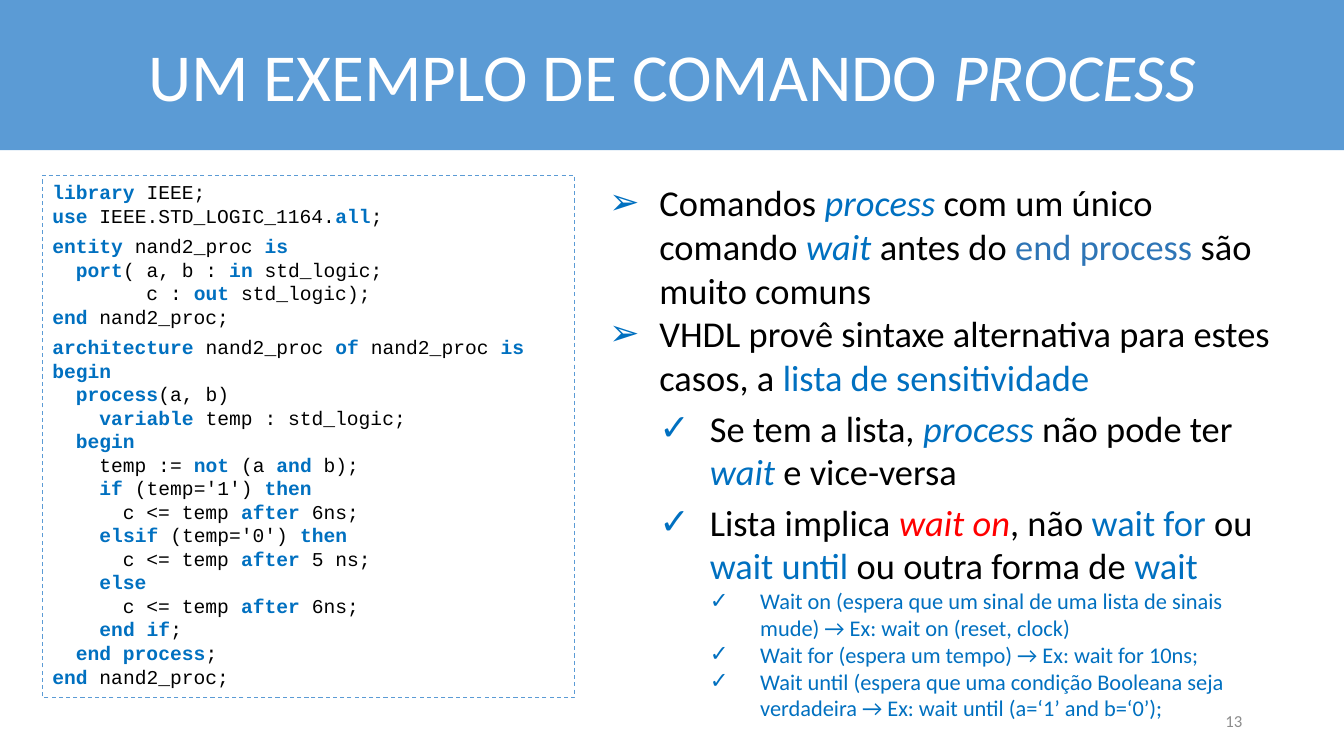
from lxml import etree
from pptx import Presentation
from pptx import util as u
from pptx.dml.color import RGBColor
from pptx.enum import dml, shapes, text
from pptx.oxml.ns import qn

COLORS = {"band": "5B9BD5", "white": "FFFFFF", "black": "000000", "blue": "0070C0",
          "steel": "2E75B6", "red": "FF0000", "gray": "8C8C8C"}

# Segments are split by "|"; a leading mark selects the format
MARKS = {"*": {"color": "blue", "bold": True},
         "~": {"color": "blue"},
         "/": {"color": "blue", "italic": True},
         "!": {"color": "red", "italic": True},
         "^": {"color": "steel"},
         "_": {"italic": True}}

TITLE = "UM EXEMPLO DE COMANDO |_PROCESS"

# Each block of code is set off by a small gap
CODE_BLOCKS = [
    ["*library |IEEE;",
     "*use |IEEE.STD_LOGIC_1164.|*all|;"],
    ["*entity |nand2_proc |*is",
     "*  port|( a, b : |*in |std_logic;",
     "        c : |*out |std_logic);",
     "*end |nand2_proc;"],
    ["*architecture |nand2_proc |*of |nand2_proc |*is",
     "*begin",
     "  |*process|(a, b)",
     "    |*variable |temp : std_logic;",
     "  |*begin",
     "    temp := |*not |(a |*and |b);",
     "    |*if |(temp='1') |*then",
     "      c <= temp |*after |6ns;",
     "    |*elsif |(temp='0') |*then",
     "      c <= temp |*after |5 ns;",
     "*    else",
     "      c <= temp |*after |6ns;",
     "    |*end if|;",
     "  |*end process|;",
     "*end |nand2_proc;"],
]

# Level, gap before in points, text
POINTS = [
    (0, 0, "Comandos |/process |com um único comando |/wait |antes do "
           "|^end process |são muito comuns"),
    (0, 0, "VHDL provê sintaxe alternativa para estes casos, a |~lista de sensitividade"),
    (1, 4.8, "Se tem a lista, |/process |não pode ter |/wait |e vice-versa"),
    (1, 4.8, "Lista implica |!wait on|, não |~wait for |ou |~wait until "
             "|ou outra forma de |~wait"),
    (2, 0, "~Wait on (espera que um sinal de uma lista de sinais mude) → "
           "Ex: wait on (reset, clock)"),
    (2, 0, "~Wait for (espera um tempo) → Ex: wait for 10ns;"),
    (2, 0, "~Wait until (espera que uma condição Booleana seja verdadeira → "
           "Ex: wait until (a=‘1’ and b=‘0’);"),
]


def rgb(name):
    return RGBColor.from_string(COLORS[name])


def write(paragraph, marked, size, font="Calibri", color="black",
          align=text.PP_ALIGN.LEFT, gap=0):
    """Fill a paragraph with marked text."""
    paragraph.alignment = align
    paragraph.space_before = u.Pt(gap)
    paragraph.space_after = u.Pt(0)
    paragraph.line_spacing = u.Pt(round(size * 1.2, 1))
    for segment in marked.split("|"):
        look = MARKS.get(segment[0], {})
        run = paragraph.add_run()
        run.text = segment[1:] if look else segment
        run.font.name, run.font.size = font, u.Pt(size)
        run.font.bold = look.get("bold", False)
        run.font.italic = look.get("italic", False)
        run.font.color.rgb = rgb(look.get("color", color))


def add_bullet(paragraph, char, indent):
    """Hang a blue bullet half an inch before the text."""
    props = paragraph._p.get_or_add_pPr()
    props.set("marL", str(u.Inches(indent)))
    props.set("indent", str(u.Inches(-0.5)))
    tint = etree.SubElement(props, qn("a:buClr"))
    etree.SubElement(tint, qn("a:srgbClr"), val=COLORS["blue"])
    etree.SubElement(props, qn("a:buChar"), char=char)


def next_paragraph(frame, first):
    return frame.paragraphs[0] if first else frame.add_paragraph()


class ProcessSlide:
    def __init__(self, deck):
        self.slide = deck.slides.add_slide(deck.slide_layouts[1])

    def place(self, shape, left, top, width, height):
        shape.left, shape.top = u.Inches(left), u.Inches(top)
        shape.width, shape.height = u.Inches(width), u.Inches(height)

    def title(self, marked):
        banner = self.slide.shapes.title
        self.place(banner, 0, 0, 13.33, 1.49)
        banner.fill.solid()
        banner.fill.fore_color.rgb = rgb("band")
        frame = banner.text_frame
        frame.auto_size = text.MSO_AUTO_SIZE.NONE
        frame.vertical_anchor = text.MSO_ANCHOR.MIDDLE
        frame.margin_left = frame.margin_right = u.Inches(0.8)
        write(frame.paragraphs[0], marked, 48, color="white", align=text.PP_ALIGN.CENTER)

    def code(self, blocks):
        listing = self.slide.shapes.add_shape(
            shapes.MSO_SHAPE.RECTANGLE,
            u.Inches(0.42), u.Inches(1.74), u.Inches(5.28), u.Inches(5.18))
        listing.shadow.inherit = False
        listing.fill.background()
        listing.line.color.rgb = rgb("band")
        listing.line.width = u.Pt(0.75)
        listing.line.dash_style = dml.MSO_LINE.DASH
        frame = listing.text_frame
        frame.word_wrap = True
        frame.vertical_anchor = text.MSO_ANCHOR.TOP
        for b, block in enumerate(blocks):
            for n, line in enumerate(block):
                write(next_paragraph(frame, b == n == 0), line, 14, font="Courier New",
                      gap=4.8 if b and n == 0 else 0)

    def points(self, items):
        body = self.slide.placeholders[1]
        self.place(body, 5.94, 1.74, 6.9, 5.52)
        frame = body.text_frame
        frame.auto_size = text.MSO_AUTO_SIZE.NONE
        frame.vertical_anchor = text.MSO_ANCHOR.TOP
        for n, (level, gap, marked) in enumerate(items):
            point = next_paragraph(frame, n == 0)
            point.level = level
            write(point, marked, 16 if level == 2 else 26, gap=gap)
            add_bullet(point, "✓" if level else "➢", 0.5 * (level + 1))

    def page_number(self, number):
        corner = self.slide.shapes.add_textbox(
            u.Inches(9.42), u.Inches(6.95), u.Inches(3), u.Inches(0.4))
        frame = corner.text_frame
        frame.word_wrap = True
        frame.vertical_anchor = text.MSO_ANCHOR.MIDDLE
        write(frame.paragraphs[0], number, 12, color="gray", align=text.PP_ALIGN.RIGHT)


def main():
    deck = Presentation()
    deck.slide_width, deck.slide_height = u.Inches(13.33), u.Inches(7.5)
    page = ProcessSlide(deck)
    # Banner
    page.title(TITLE)
    # VHDL listing on the left, remarks on the right
    page.code(CODE_BLOCKS)
    page.points(POINTS)
    # Footer
    page.page_number("13")
    deck.save("out.pptx")


if __name__ == "__main__":
    main()
